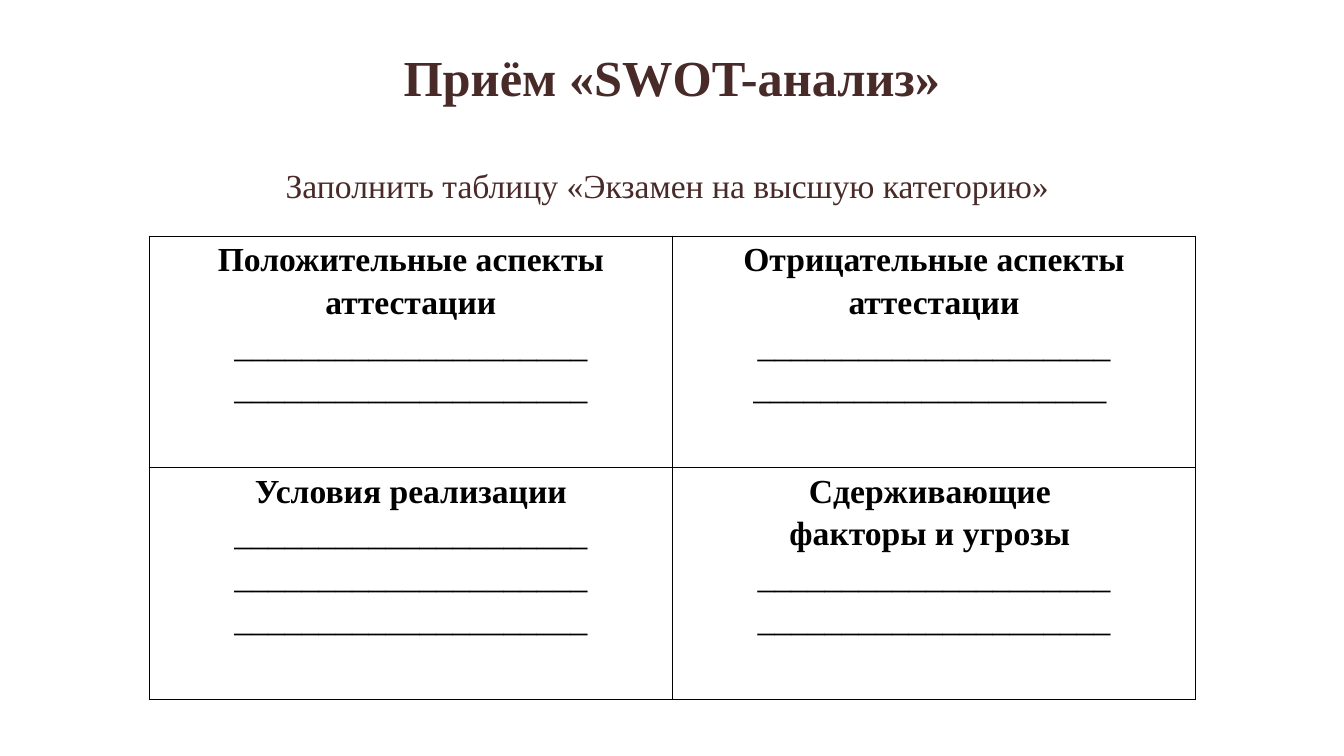
import pptx
import pptx.dml.color
import pptx.enum.text
import pptx.oxml
import pptx.oxml.ns
import pptx.util
from dataclasses import dataclass

Pt = pptx.util.Pt
ALIGN = pptx.enum.text.PP_ALIGN
ANCHOR = pptx.enum.text.MSO_ANCHOR


@dataclass(frozen=True)
class Theme:
    font: str = "Times New Roman"
    brown: str = "482A28"
    black: str = "000000"
    title_size: int = 36
    text_size: int = 24


theme = Theme()


def write(para, text, size, color, bold):
    para.text = text
    formats = {"name": theme.font, "size": Pt(size), "bold": bold}
    for span in para.runs:
        for name, value in formats.items():
            setattr(span.font, name, value)
        span.font.color.rgb = pptx.dml.color.RGBColor.from_string(color)


def add_borders(cell):
    for side in ("L", "R", "T", "B"):
        cell._tc.get_or_add_tcPr().append(pptx.oxml.parse_xml(
            f'<a:ln{side} {pptx.oxml.ns.nsdecls("a")} w="{Pt(1)}"><a:solidFill>'
            f'<a:srgbClr val="{theme.black}"/></a:solidFill></a:ln{side}>'))


deck = pptx.Presentation()
deck.slide_width, deck.slide_height = Pt(960), Pt(540)
page = deck.slides.add_slide(deck.slide_layouts.get_by_name("Title Only"))

# Title and task
title = page.shapes.title
title.left, title.top, title.width, title.height = Pt(278), Pt(29), Pt(404), Pt(51)
title.text_frame.word_wrap = False
title.text_frame.vertical_anchor = ANCHOR.MIDDLE
heading = title.text_frame.paragraphs[0]
heading.alignment = ALIGN.CENTER
write(heading, "Приём «SWOT-анализ»", theme.title_size, theme.brown, True)

task = page.shapes.add_textbox(Pt(197), Pt(114), Pt(565), Pt(36))
task.text_frame.word_wrap = False
write(task.text_frame.paragraphs[0], "Заполнить таблицу «Экзамен на высшую категорию»",
      theme.text_size, theme.brown, False)

# SWOT table: a heading and blanks to fill in, per cell
blank = "_" * 21
swot = [
    [("Положительные аспекты аттестации", [blank, blank]),
     ("Отрицательные аспекты аттестации", [blank, blank + " "])],
    [("Условия реализации", [blank, blank, blank]),
     ("Сдерживающие \vфакторы и угрозы ", [blank, blank])],
]
column_width, row_height = Pt(373.7), Pt(165.3)
table = page.shapes.add_table(2, 2, Pt(106.6), Pt(168.8),
                              2 * column_width, 2 * row_height).table
table.first_row = table.horz_banding = False
cell_format = {"margin_left": Pt(5), "margin_right": Pt(5),
               "margin_top": 0, "margin_bottom": 0}

for row_index, row in enumerate(swot):
    table.rows[row_index].height = row_height
    table.columns[row_index].width = column_width
    for column_index, (aspect, blanks) in enumerate(row):
        cell = table.cell(row_index, column_index)
        add_borders(cell)
        cell.fill.background()
        for name, value in cell_format.items():
            setattr(cell, name, value)
        for line_index, text in enumerate([aspect, *blanks]):
            frame = cell.text_frame
            para = frame.add_paragraph() if line_index else frame.paragraphs[0]
            para.alignment = ALIGN.CENTER
            para.line_spacing = 1.15
            write(para, text, theme.text_size, theme.black, line_index == 0)

deck.save("out.pptx")
